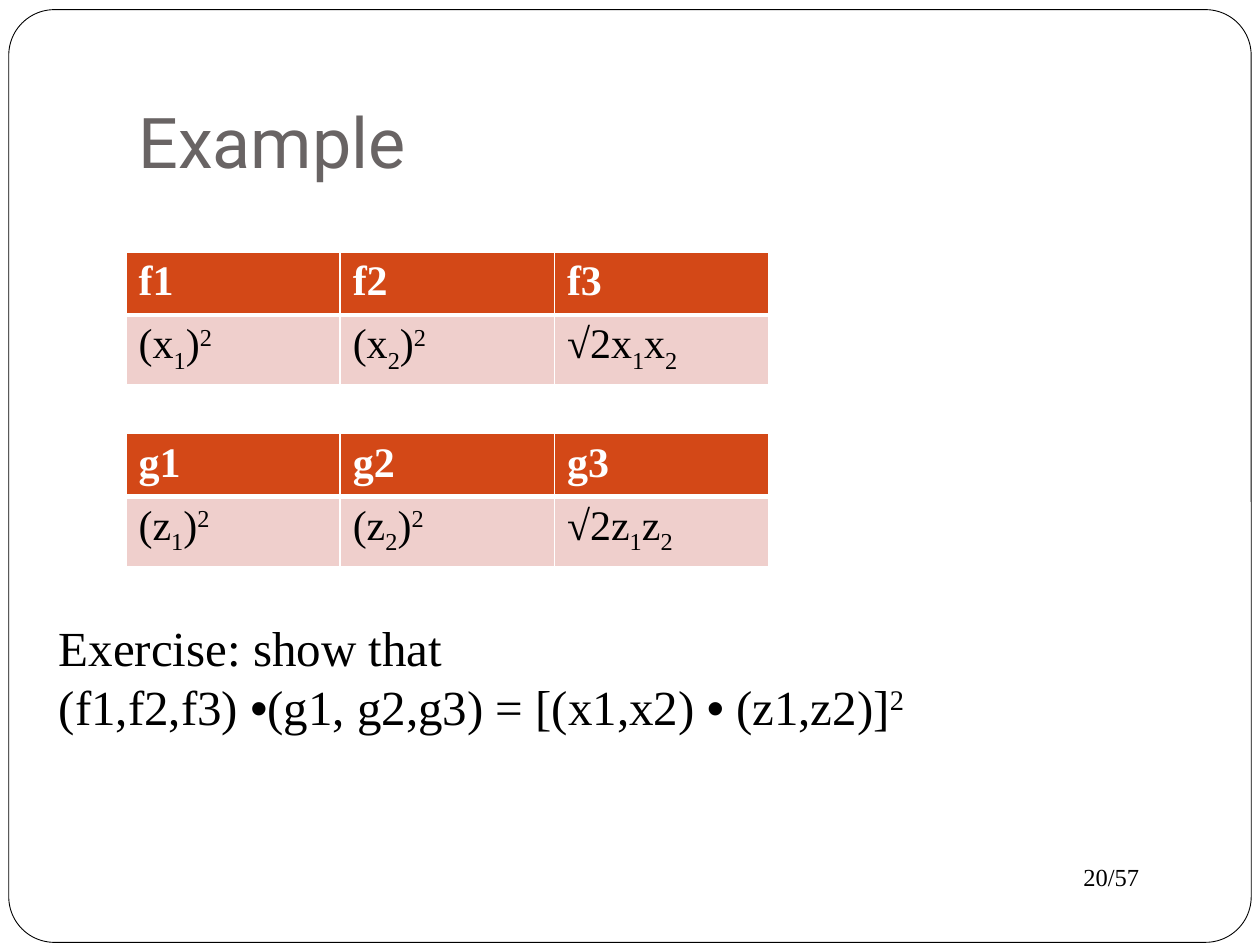
from typing import NamedTuple

from lxml import etree
from pptx import Presentation
from pptx import util as u
from pptx.dml.color import RGBColor
from pptx.enum import shapes, text
from pptx.oxml.ns import qn

COLOURS = {
    "paper": "FFFFFF",
    "ink": "000000",
    "title": "696464",
    "header": "D34817",
    "body": "EFCFCC",
}
SERIF = "Times New Roman"
COLUMN_WIDTH = 122.4
SUBSCRIPT, SUPERSCRIPT = -25, 30


class Span(NamedTuple):
    text: str
    baseline: int = 0
    font: str = SERIF


class FeatureTable(NamedTuple):
    feature: str
    variable: str
    top: float
    row_heights: tuple[float, float]


def colour(name: str) -> RGBColor:
    return RGBColor.from_string(COLOURS[name])


def write(para, content: str, *, size: float, font: str = SERIF,
          ink: str = "ink", bold: bool = False, baseline: int = 0) -> None:
    """Append one formatted span of text to a paragraph."""
    span = para.add_run()
    span.text = content
    span.font.size = u.Pt(size)
    span.font.name = font
    span.font.bold = bold
    span.font.color.rgb = colour(ink)
    if baseline:
        span.font._element.set("baseline", str(baseline * 1000))


def write_spans(para, spans: list[Span], *, size: float) -> None:
    for span in spans:
        write(para, span.text, size=size, font=span.font, baseline=span.baseline)


def add_text_box(page, left: float, top: float, width: float, height: float):
    box = page.shapes.add_textbox(u.Pt(left), u.Pt(top), u.Pt(width), u.Pt(height))
    box.text_frame.word_wrap = True
    return box.text_frame


def set_borders(cell, top: float, bottom: float) -> None:
    """Draw white cell borders, with the side lines one point wide."""
    properties = cell._tc.get_or_add_tcPr()
    sides = {"lnL": 1, "lnR": 1, "lnT": top, "lnB": bottom}
    for index, (side, width) in enumerate(sides.items()):
        line = etree.Element(qn(f"a:{side}"), w=str(u.Pt(width)))
        fill = etree.SubElement(line, qn("a:solidFill"))
        etree.SubElement(fill, qn("a:srgbClr"), val=COLOURS["paper"])
        properties.insert(index, line)


def squared(variable: str, index: int) -> list[Span]:
    return [Span(f"({variable}"), Span(str(index), SUBSCRIPT),
            Span(")"), Span("2", SUPERSCRIPT)]


def add_feature_table(page, features: FeatureTable) -> None:
    """Draw a header of feature names above their formulas."""
    name = features.variable
    product = [Span(f"√2{name}"), Span("1", SUBSCRIPT),
               Span(name), Span("2", SUBSCRIPT)]
    formulas = [squared(name, 1), squared(name, 2), product]
    table = page.shapes.add_table(
        2, len(formulas), u.Pt(72), u.Pt(features.top),
        u.Pt(COLUMN_WIDTH * len(formulas)), u.Pt(sum(features.row_heights))).table
    for row, height in zip(table.rows, features.row_heights):
        row.height = u.Pt(height)
    for index, formula in enumerate(formulas):
        table.columns[index].width = u.Pt(COLUMN_WIDTH)
        header, body = table.cell(0, index), table.cell(1, index)
        for cell, fill in ((header, "header"), (body, "body")):
            cell.fill.solid()
            cell.fill.fore_color.rgb = colour(fill)
        set_borders(header, top=1, bottom=3)
        set_borders(body, top=3, bottom=1)
        write(header.text_frame.paragraphs[0], f"{features.feature}{index + 1}",
              size=24, ink="paper", bold=True)
        write_spans(body.text_frame.paragraphs[0], formula, size=24)


def main() -> None:
    deck = Presentation()
    deck.slide_width, deck.slide_height = u.Pt(720), u.Pt(540)
    page = deck.slides.add_slide(deck.slide_layouts[6])

    # Rounded page frame
    frame = page.shapes.add_shape(
        shapes.MSO_SHAPE.ROUNDED_RECTANGLE,
        u.Pt(5), u.Pt(5.5), u.Pt(710), u.Pt(533))
    frame.adjustments[0] = 0.049
    frame.shadow.inherit = False
    frame.fill.solid()
    frame.fill.fore_color.rgb = colour("paper")
    frame.line.color.rgb = colour("ink")
    frame.line.width = u.Pt(0.5)

    # Page number
    number = add_text_box(page, 612, 489, 72, 24.5)
    write(number.paragraphs[0], "20/57", size=14)

    # Title
    title = add_text_box(page, 72, 21.6, 612, 90)
    title.vertical_anchor = text.MSO_ANCHOR.BOTTOM
    title.margin_bottom = u.Pt(7.2)
    write(title.paragraphs[0], "Example", size=40, font="Roboto", ink="title")

    # Feature tables
    for features in (FeatureTable("f", "x", 144, (34, 38)),
                     FeatureTable("g", "z", 247.7, (36, 40))):
        add_feature_table(page, features)

    # Exercise
    para = add_text_box(page, 26.6, 349.2, 657.4, 75).paragraphs[0]
    dot = Span("•", font="Arial")
    write(para, "Exercise: show that ", size=28)
    para.add_line_break()
    write_spans(para, [Span("(f1,f2,f3) "), dot, Span("(g1, g2,g3) = [(x1,x2) "),
                       dot, Span(" (z1,z2)]"), Span("2", SUPERSCRIPT)], size=28)

    deck.save("out.pptx")


if __name__ == "__main__":
    main()
